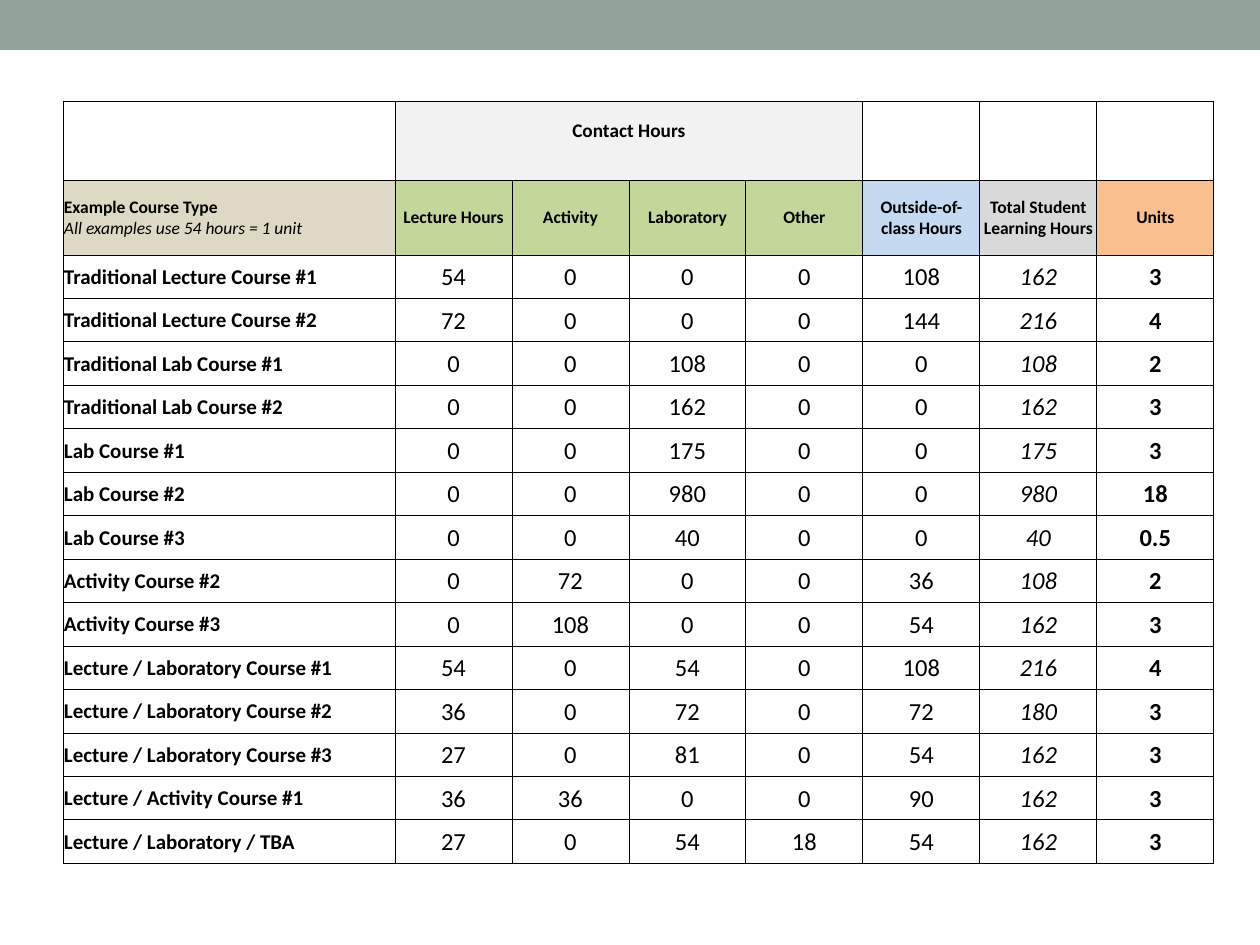
from dataclasses import dataclass

from lxml.etree import SubElement
from pptx import Presentation
from pptx.dml.color import RGBColor
from pptx.enum.shapes import MSO_SHAPE
from pptx.enum.text import MSO_ANCHOR, PP_ALIGN
from pptx.oxml.ns import qn
from pptx.slide import Slide
from pptx.table import Table, _Cell
from pptx.util import Emu, Pt

PIXELS_PER_INCH = 126


@dataclass(frozen=True)
class Theme:
    font: str = "Calibri"
    ink: str = "000000"
    paper: str = "FFFFFF"
    bar: str = "93A299"
    contact: str = "F2F2F2"
    course: str = "DDD9C4"
    hours: str = "C4D79B"
    outside: str = "C5D9F1"
    total: str = "D9D9D9"
    units: str = "FABF8F"
    header_size: int = 10
    group_size: int = 11
    course_size: int = 12
    value_size: int = 14
    border: float = 0.5


@dataclass(frozen=True)
class CellStyle:
    size: int
    fill: str = "FFFFFF"
    bold: bool = False
    italic: bool = False
    align: PP_ALIGN = PP_ALIGN.CENTER
    bottom: int = 0


@dataclass(frozen=True)
class Course:
    name: str
    lecture: int
    activity: int
    laboratory: int
    other: int
    outside: int
    total: int
    units: float

    def values(self) -> list[str]:
        numbers = (self.lecture, self.activity, self.laboratory, self.other,
                   self.outside, self.total, self.units)
        return [str(number) for number in numbers]


THEME = Theme()

SLIDE_WIDTH, SLIDE_HEIGHT = 1260, 945
BAR_HEIGHT = 50
TABLE_LEFT, TABLE_TOP = 63, 101
COURSE_WIDTH, VALUE_WIDTH = 332, 117
GROUP_HEIGHT, HEADER_HEIGHT, BODY_HEIGHT = 79, 75, 609

HEADERS = [
    ("Lecture Hours", THEME.hours),
    ("Activity", THEME.hours),
    ("Laboratory", THEME.hours),
    ("Other", THEME.hours),
    ("Outside-of-class Hours", THEME.outside),
    ("Total Student Learning Hours", THEME.total),
    ("Units", THEME.units),
]
CONTACT_COLUMNS = 4

COURSES = [
    Course("Traditional Lecture Course #1", 54, 0, 0, 0, 108, 162, 3),
    Course("Traditional Lecture Course #2", 72, 0, 0, 0, 144, 216, 4),
    Course("Traditional Lab Course #1", 0, 0, 108, 0, 0, 108, 2),
    Course("Traditional Lab Course #2", 0, 0, 162, 0, 0, 162, 3),
    Course("Lab Course #1", 0, 0, 175, 0, 0, 175, 3),
    Course("Lab Course #2", 0, 0, 980, 0, 0, 980, 18),
    Course("Lab Course #3", 0, 0, 40, 0, 0, 40, 0.5),
    Course("Activity Course #2", 0, 72, 0, 0, 36, 108, 2),
    Course("Activity Course #3", 0, 108, 0, 0, 54, 162, 3),
    Course("Lecture / Laboratory Course #1", 54, 0, 54, 0, 108, 216, 4),
    Course("Lecture / Laboratory Course #2", 36, 0, 72, 0, 72, 180, 3),
    Course("Lecture / Laboratory Course #3", 27, 0, 81, 0, 54, 162, 3),
    Course("Lecture / Activity Course #1", 36, 36, 0, 0, 90, 162, 3),
    Course("Lecture / Laboratory / TBA", 27, 0, 54, 18, 54, 162, 3),
]

GROUP = CellStyle(THEME.group_size, THEME.contact, bold=True, bottom=21)
COURSE_HEADER = CellStyle(THEME.header_size, THEME.course, bold=True, align=PP_ALIGN.LEFT)
COURSE_NAME = CellStyle(THEME.course_size, bold=True, align=PP_ALIGN.LEFT)
HOURS = CellStyle(THEME.value_size)
TOTAL = CellStyle(THEME.value_size, italic=True)
UNITS = CellStyle(THEME.value_size, bold=True)
VALUE_STYLES = [HOURS] * 5 + [TOTAL, UNITS]


def px(length: int) -> Emu:
    return Emu(round(length * 914400 / PIXELS_PER_INCH))


def add_top_bar(slide: Slide) -> None:
    bar = slide.shapes.add_shape(MSO_SHAPE.RECTANGLE, 0, 0, px(SLIDE_WIDTH), px(BAR_HEIGHT))
    bar.shadow.inherit = False
    bar.fill.solid()
    bar.fill.fore_color.rgb = RGBColor.from_string(THEME.bar)
    bar.line.fill.background()


def set_borders(cell: _Cell) -> None:
    properties = cell._tc.get_or_add_tcPr()
    for side in ("a:lnL", "a:lnR", "a:lnT", "a:lnB"):
        line = SubElement(properties, qn(side), w=str(Pt(THEME.border)))
        fill = SubElement(line, qn("a:solidFill"))
        SubElement(fill, qn("a:srgbClr"), val=THEME.ink)


def set_fill(cell: _Cell, color: str) -> None:
    cell.fill.solid()
    cell.fill.fore_color.rgb = RGBColor.from_string(color)


def write_cell(cell: _Cell, text: str, style: CellStyle) -> None:
    set_fill(cell, style.fill)
    cell.vertical_anchor = MSO_ANCHOR.MIDDLE
    cell.margin_left = cell.margin_right = cell.margin_top = px(1)
    cell.margin_bottom = px(style.bottom)
    cell.text_frame.text = text
    for paragraph in cell.text_frame.paragraphs:
        paragraph.alignment = style.align
        for run in paragraph.runs:
            run.font.name = THEME.font
            run.font.size = Pt(style.size)
            run.font.bold = style.bold
            run.font.italic = style.italic
            run.font.color.rgb = RGBColor.from_string(THEME.ink)


def add_course_table(slide: Slide) -> Table:
    """Add the empty grid with its sizes, borders and plain fill."""
    width = COURSE_WIDTH + VALUE_WIDTH * len(HEADERS)
    height = GROUP_HEIGHT + HEADER_HEIGHT + BODY_HEIGHT
    table = slide.shapes.add_table(
        len(COURSES) + 2, len(HEADERS) + 1,
        px(TABLE_LEFT), px(TABLE_TOP), px(width), px(height)).table
    table.first_row = table.horz_banding = False
    widths = [COURSE_WIDTH] + [VALUE_WIDTH] * len(HEADERS)
    for column, column_width in zip(table.columns, widths):
        column.width = px(column_width)
    body_row = px(BODY_HEIGHT) // len(COURSES)
    heights = [px(GROUP_HEIGHT), px(HEADER_HEIGHT)] + [body_row] * len(COURSES)
    for row, row_height in zip(table.rows, heights):
        row.height = row_height
    for cell in table.iter_cells():
        set_borders(cell)
        set_fill(cell, THEME.paper)
    return table


def fill_headers(table: Table) -> None:
    table.cell(0, 1).merge(table.cell(0, CONTACT_COLUMNS))
    write_cell(table.cell(0, 1), "Contact Hours", GROUP)

    course_header = table.cell(1, 0)
    write_cell(course_header, "Example Course Type\nAll examples use 54 hours = 1 unit", COURSE_HEADER)
    note = course_header.text_frame.paragraphs[1].runs[0]
    note.font.bold, note.font.italic = False, True

    for column, (label, color) in enumerate(HEADERS, start=1):
        write_cell(table.cell(1, column), label, CellStyle(THEME.header_size, color, bold=True))


def fill_courses(table: Table) -> None:
    for row, course in enumerate(COURSES, start=2):
        write_cell(table.cell(row, 0), course.name, COURSE_NAME)
        for column, (value, style) in enumerate(zip(course.values(), VALUE_STYLES), start=1):
            write_cell(table.cell(row, column), value, style)


def main() -> None:
    presentation = Presentation()
    presentation.slide_width, presentation.slide_height = px(SLIDE_WIDTH), px(SLIDE_HEIGHT)
    slide = presentation.slides.add_slide(presentation.slide_layouts[6])
    add_top_bar(slide)
    table = add_course_table(slide)
    fill_headers(table)
    fill_courses(table)
    presentation.save("out.pptx")


if __name__ == "__main__":
    main()
